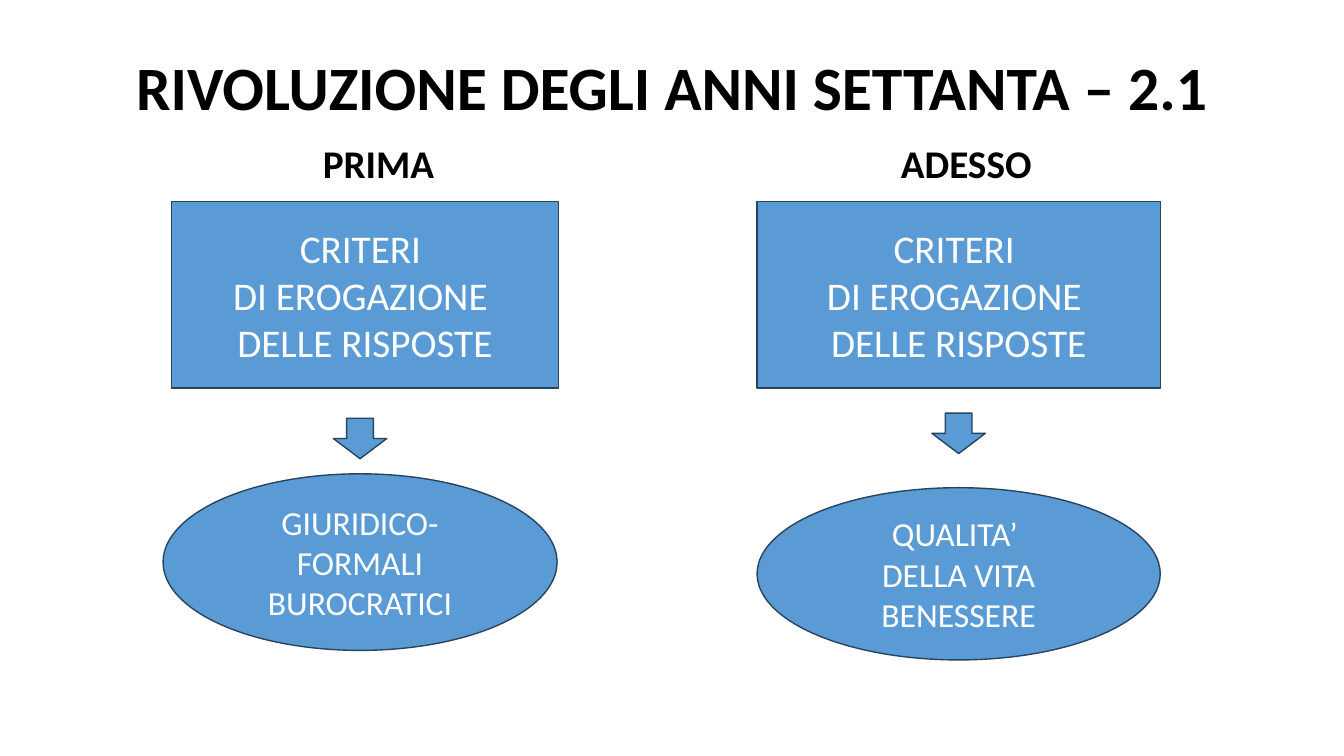
from pptx import Presentation
from pptx.dml.color import RGBColor
from pptx.enum.shapes import MSO_SHAPE as Shape
from pptx.enum.text import MSO_ANCHOR as Anchor, PP_ALIGN as Align
from pptx.util import Cm, Pt

# Content
TITLE = "RIVOLUZIONE DEGLI ANNI SETTANTA – 2.1"
CRITERIA = ["CRITERI ", "DI EROGAZIONE ", "DELLE RISPOSTE"]
# Places in cm: left, top, width, height
COLUMNS = [
    {"heading": "PRIMA", "heading_left": 2.34,
     "criteria_at": (4.32, 5.08, 9.75, 4.7),
     "arrow_top": 10.54,
     "outcome": ["GIURIDICO-FORMALI", "BUROCRATICI"],
     "outcome_at": (4.11, 11.94, 9.93, 4.45)},
    {"heading": "ADESSO", "heading_left": 17.15,
     "criteria_at": (19.08, 5.08, 10.16, 4.7),
     "arrow_top": 10.41,
     "outcome": ["QUALITA’ ", "DELLA VITA", "BENESSERE"],
     "outcome_at": (19.08, 12.29, 10.16, 4.34)},
]
COLORS = {"fill": "5B9BD5", "line": "28445D", "dark": "000000", "light": "FFFFFF"}
ARROW_WIDTH, ARROW_HEIGHT = 1.35, 1.02
HEADING_TOP, HEADING_WIDTH, HEADING_HEIGHT = 3.53, 14.4, 13.64

FONTS = {
    "title": {"size": Pt(44), "bold": True},
    "heading": {"size": Pt(28), "bold": True},
    "criteria": {"size": Pt(28)},
    "outcome": {"size": Pt(24)},
}
PARAGRAPHS = {
    "title": {"line_spacing": 0.9},
    "heading": {"line_spacing": 0.9, "space_before": Pt(10)},
}

prs = Presentation()
prs.slide_width, prs.slide_height = Cm(33.87), Cm(19.05)
slide = prs.slides.add_slide(prs.slide_layouts[6])


def write(frame, lines, role, color, anchor):
    frame.word_wrap = True
    frame.vertical_anchor = anchor
    for i, line in enumerate(lines):
        paragraph = frame.paragraphs[0] if i == 0 else frame.add_paragraph()
        for name, value in {"alignment": Align.CENTER, **PARAGRAPHS.get(role, {})}.items():
            setattr(paragraph, name, value)
        run = paragraph.add_run()
        run.text = line
        for name, value in {"name": "Calibri", **FONTS[role]}.items():
            setattr(run.font, name, value)
        run.font.color.rgb = RGBColor.from_string(COLORS[color])


def add_label(at, text, role, anchor):
    label = slide.shapes.add_textbox(*map(Cm, at))
    write(label.text_frame, [text], role, "dark", anchor)


def add_block(kind, at, lines=(), role=None):
    block = slide.shapes.add_shape(kind, *map(Cm, at))
    block.shadow.inherit = False
    block.fill.solid()
    block.fill.fore_color.rgb = RGBColor.from_string(COLORS["fill"])
    block.line.color.rgb = RGBColor.from_string(COLORS["line"])
    block.line.width = Pt(1)
    write(block.text_frame, lines, role, "light", Anchor.MIDDLE)


# Title
add_label((2.34, 1.02, 29.21, 2.51), TITLE, "title", Anchor.MIDDLE)

# Before and now: heading, criteria, arrow, outcome
for column in COLUMNS:
    add_label((column["heading_left"], HEADING_TOP, HEADING_WIDTH, HEADING_HEIGHT),
              column["heading"], "heading", Anchor.TOP)
    add_block(Shape.RECTANGLE, column["criteria_at"], CRITERIA, "criteria")
    left, _, width, _ = column["outcome_at"]
    arrow_left = left + (width - ARROW_WIDTH) / 2
    add_block(Shape.DOWN_ARROW,
              (arrow_left, column["arrow_top"], ARROW_WIDTH, ARROW_HEIGHT))
    add_block(Shape.OVAL, column["outcome_at"], column["outcome"], "outcome")

prs.save("out.pptx")
